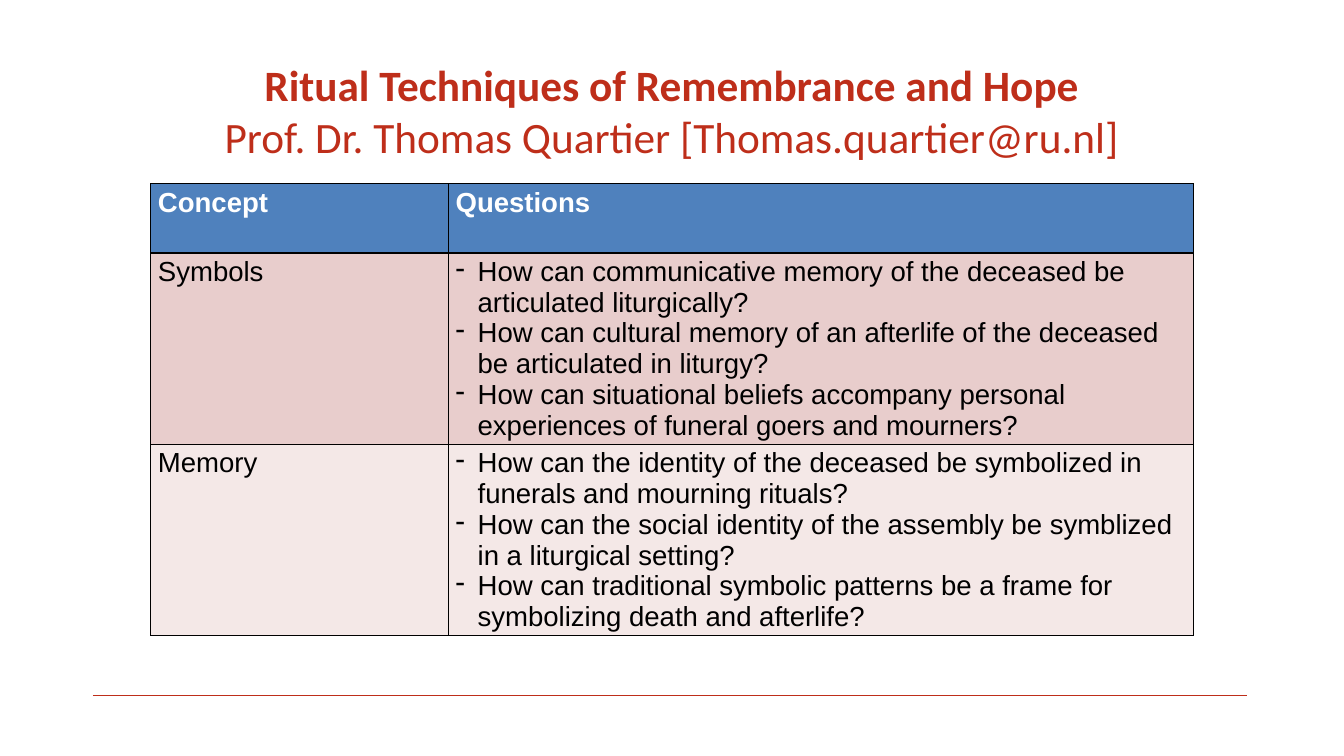
import pptx
import pptx.dml.color
import pptx.enum.shapes
import pptx.enum.text
import pptx.oxml
import pptx.oxml.ns
import pptx.util
from lxml import etree

Cm = pptx.util.Cm
Pt = pptx.util.Pt
qn = pptx.oxml.ns.qn

COLORS = {
    "red": "BE2E1A",
    "header": "4F81BD",
    "symbols": "E8CDCC",
    "memory": "F4E8E7",
    "white": "FFFFFF",
    "black": "000000",
}
COLUMN_WIDTHS = [10.67, 26.7]
ROW_HEIGHTS = [2.49, 6.86, 6.86]
HANGING = 0.79
ROWS = [
    ("header", "Concept", ["Questions"]),
    ("symbols", "Symbols", [
        "How can communicative memory of the deceased be articulated liturgically?",
        "How can cultural memory of an afterlife of the deceased be articulated in liturgy?",
        "How can situational beliefs accompany personal experiences of funeral goers and mourners?",
    ]),
    ("memory", "Memory", [
        "How can the identity of the deceased be symbolized in funerals and mourning rituals?",
        "How can the social identity of the assembly be symblized in a liturgical setting?",
        "How can traditional symbolic patterns be a frame for symbolizing death and afterlife?",
    ]),
]


def color(name):
    return pptx.dml.color.RGBColor.from_string(COLORS[name])


def style(font, face, size, color_name, bold):
    font.name = face
    font.size = Pt(size)
    font.color.rgb = color(color_name)
    font.bold = bold


def add_title(page, heading, author):
    box = page.shapes.title
    box.left, box.top, box.width, box.height = Cm(1.9), Cm(2), Cm(44.4), Cm(3)
    frame = box.text_frame
    frame.word_wrap = True
    frame.auto_size = pptx.enum.text.MSO_AUTO_SIZE.NONE
    frame.vertical_anchor = pptx.enum.text.MSO_ANCHOR.TOP
    frame.margin_left = frame.margin_right = Cm(0.1)
    frame.margin_top = frame.margin_bottom = Cm(0.1)
    para = frame.paragraphs[0]
    para.alignment = pptx.enum.text.PP_ALIGN.CENTER
    para.space_before = Pt(0)
    for text, bold in [(heading, True), (author, False)]:
        if para.runs:
            para.add_line_break()
        span = para.add_run()
        span.text = text
        style(span.font, "Calibri", 44, "red", bold)


def add_borders(cell, top, bottom):
    properties = cell._tc.get_or_add_tcPr()
    for side, width in [("L", 1), ("R", 1), ("T", top), ("B", bottom)]:
        line = etree.SubElement(properties, qn(f"a:ln{side}"), w=str(Pt(width)))
        fill = etree.SubElement(line, qn("a:solidFill"))
        etree.SubElement(fill, qn("a:srgbClr"), val=COLORS["black"])


def add_dash(para):
    properties = para._p.get_or_add_pPr()
    properties.set("marL", str(Cm(HANGING)))
    properties.set("indent", str(-Cm(HANGING)))
    etree.SubElement(properties, qn("a:buChar"), char="-")


def fill_cell(cell, lines, fill_name, is_header, dashed):
    add_borders(cell, 3 if fill_name == "symbols" else 1, 3 if is_header else 1)
    cell.fill.solid()
    cell.fill.fore_color.rgb = color(fill_name)
    frame = cell.text_frame
    for index, text in enumerate(lines):
        para = frame.paragraphs[0] if index == 0 else frame.add_paragraph()
        para.text = text
        if dashed:
            add_dash(para)
        style(para.font, "Arial", 28, "white" if is_header else "black", is_header)


def add_question_table(page):
    table = page.shapes.add_table(
        len(ROWS), len(COLUMN_WIDTHS), Cm(5.41), Cm(6.58),
        Cm(sum(COLUMN_WIDTHS)), Cm(sum(ROW_HEIGHTS))).table
    for column, width in zip(table.columns, COLUMN_WIDTHS):
        column.width = Cm(width)
    for row, height in zip(table.rows, ROW_HEIGHTS):
        row.height = Cm(height)
    for row, (fill_name, concept, questions) in zip(table.rows, ROWS):
        is_header = fill_name == "header"
        fill_cell(row.cells[0], [concept], fill_name, is_header, False)
        fill_cell(row.cells[1], questions, fill_name, is_header, not is_header)


def add_rule(page):
    rule = page.shapes.add_connector(
        pptx.enum.shapes.MSO_CONNECTOR.STRAIGHT,
        Cm(3.33), Cm(24.94), Cm(44.7), Cm(24.94))
    rule.line.color.rgb = color("red")
    rule.line.width = Pt(1.5)
    etree.SubElement(rule._element.spPr, qn("a:effectLst"))


def main():
    deck = pptx.Presentation()
    deck.slide_width, deck.slide_height = Cm(48.18), Cm(27.1)
    page = deck.slides.add_slide(deck.slide_layouts[5])
    add_rule(page)
    add_title(page, "Ritual Techniques of Remembrance and Hope",
              "Prof. Dr. Thomas Quartier [Thomas.quartier@ru.nl]")
    add_question_table(page)
    deck.save("out.pptx")


if __name__ == "__main__":
    main()
